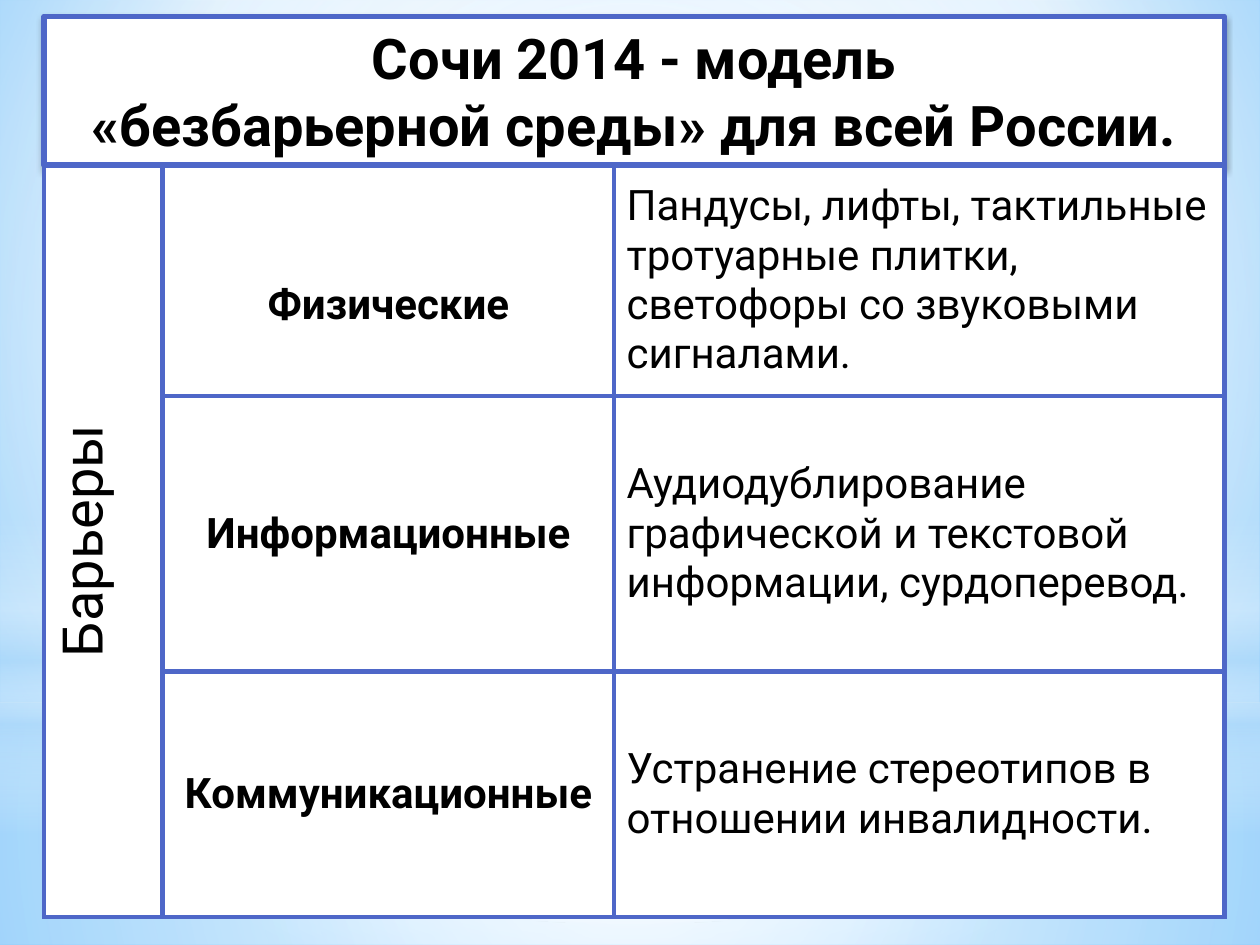
from pptx import Presentation
from pptx.dml.color import RGBColor
from pptx.enum.shapes import MSO_SHAPE as Shape
from pptx.enum.text import MSO_ANCHOR as Anchor, PP_ALIGN as Align
from pptx.oxml import parse_xml
from pptx.oxml.ns import nsdecls, qn
from pptx.util import Cm, Pt

COLORS = {
    "white": "FFFFFF", "black": "000000", "border": "4E67C8",
    "pale": "B4DCFA", "sky": "9ED5FF", "azure": "5BB9FF",
}
CENTER = (50, 50, 50, 50)
LEFT, TABLE_TOP = 0.89, 3.33
COLUMNS = (2.39, 9.1, 12.3)
ROWS = (4.65, 5.56, 4.93)
WIDTH = sum(COLUMNS)
BARRIERS = (
    ("Физические", "Пандусы, лифты, тактильные тротуарные плитки, "
                   "светофоры со звуковыми сигналами."),
    ("Информационные", "Аудиодублирование графической и текстовой "
                       "информации, сурдоперевод."),
    ("Коммуникационные", "Устранение стереотипов в отношении инвалидности."),
)


def rgb(name):
    return RGBColor.from_string(COLORS[name])


class Deck:
    font = "Roboto"
    border_width = Pt(3)

    def __init__(self, width, height):
        self.presentation = Presentation()
        self.presentation.slide_width = Cm(width)
        self.presentation.slide_height = Cm(height)
        self.slide = self.presentation.slides.add_slide(
            self.presentation.slide_layouts[6])

    def gradient(self, element, stops, focus=None):
        """Swap the solid fill in element for a gradient: round to focus, else downward.

        Stops are (position, colour, opacity), all numbers in percent.
        """
        stop_list = "".join(
            f'<a:gs pos="{position * 1000}"><a:srgbClr val="{COLORS[color]}">'
            f'<a:alpha val="{opacity * 1000}"/></a:srgbClr></a:gs>'
            for position, color, opacity in stops)
        if focus:
            sides = " ".join(f'{side}="{share * 1000}"' for side, share in zip("ltrb", focus))
            course = f'<a:path path="circle"><a:fillToRect {sides}/></a:path>'
        else:
            course = '<a:lin ang="5400000" scaled="0"/>'
        solid = element.find(".//" + qn("a:solidFill"))
        solid.getparent().replace(solid, parse_xml(
            f'<a:gradFill {nsdecls("a")} rotWithShape="1">'
            f'<a:gsLst>{stop_list}</a:gsLst>{course}</a:gradFill>'))

    def background(self, stops, focus):
        self.slide.background.fill.solid()
        self.slide.background.fill.fore_color.rgb = rgb("white")
        self.gradient(self.slide.element, stops, focus)

    def shape(self, kind, left, top, width, height):
        shape = self.slide.shapes.add_shape(kind, Cm(left), Cm(top), Cm(width), Cm(height))
        shape.shadow.inherit = False
        shape.fill.solid()
        shape.fill.fore_color.rgb = rgb("white")
        shape.line.fill.background()
        return shape

    def glow(self, kind, top, height, stops, focus=None):
        """Add a translucent band across the full slide width."""
        band = self.shape(kind, 0, top, 25.4, height)
        self.gradient(band.element.spPr, stops, focus)

    def set_text(self, frame, text, size, bold=False, align=Align.LEFT):
        frame.text = text
        frame.word_wrap = True
        for paragraph in frame.paragraphs:
            paragraph.alignment = align
            for run in paragraph.runs:
                run.font.name = self.font
                run.font.size = Pt(size)
                run.font.bold = bold
                run.font.color.rgb = rgb("black")

    def title(self, text, left, top, width, height):
        box = self.shape(Shape.RECTANGLE, left, top, width, height)
        box.line.color.rgb = rgb("border")
        box.line.width = self.border_width
        box.text_frame.vertical_anchor = Anchor.MIDDLE
        self.set_text(box.text_frame, text, 32, True, Align.CENTER)
        box.element.spPr.find(qn("a:effectLst")).append(parse_xml(
            f'<a:outerShdw {nsdecls("a")} blurRad="{Pt(3.5)}" dist="{Pt(2.2)}" dir="5400000">'
            f'<a:srgbClr val="{COLORS["black"]}"><a:alpha val="32000"/></a:srgbClr>'
            '</a:outerShdw>'))

    def table(self, left, top, columns, rows):
        frame = self.slide.shapes.add_table(
            len(rows), len(columns), Cm(left), Cm(top), Cm(sum(columns)), Cm(sum(rows)))
        table = frame.table
        table.first_row = table.horz_banding = False
        for column, width in zip(table.columns, columns):
            column.width = Cm(width)
        for row, height in zip(table.rows, rows):
            row.height = Cm(height)
        for cell in table.iter_cells():
            self.style_cell(cell)
        return table

    def style_cell(self, cell):
        cell.fill.solid()
        cell.fill.fore_color.rgb = rgb("white")
        cell.vertical_anchor = Anchor.MIDDLE
        properties = cell._tc.get_or_add_tcPr()
        for index, side in enumerate("LRTB"):
            properties.insert(index, parse_xml(
                f'<a:ln{side} {nsdecls("a")} w="{self.border_width}"><a:solidFill>'
                f'<a:srgbClr val="{COLORS["border"]}"/></a:solidFill></a:ln{side}>'))


def main():
    deck = Deck(25.4, 19.05)
    deck.background([(0, "sky", 100), (60, "white", 100), (100, "azure", 100)],
                    (20, 10, 20, 60))
    deck.glow(Shape.RECTANGLE, 14.17, 4.88,
              [(0, "white", 91), (37, "white", 76), (100, "pale", 79)], CENTER)
    deck.glow(Shape.RECTANGLE, 0, 14.17,
              [(0, "white", 89), (48, "white", 62), (100, "pale", 79)], CENTER)
    deck.glow(Shape.RECTANGLE, 10.46, 6.35,
              [(0, "white", 0), (29, "white", 30), (45, "pale", 40),
               (55, "white", 26), (65, "pale", 60), (100, "white", 0)])
    deck.glow(Shape.OVAL, 4.45, 14.17, [(0, "white", 100), (56, "white", 0)], CENTER)

    deck.title("Сочи 2014 - модель\n«безбарьерной среды» для всей России.",
               LEFT, 0.33, WIDTH, 3)

    table = deck.table(LEFT, TABLE_TOP, COLUMNS, ROWS)
    heading = table.cell(0, 0)
    heading.merge(table.cell(len(ROWS) - 1, 0))
    heading._tc.get_or_add_tcPr().set("vert", "vert270")
    deck.set_text(heading.text_frame, "Барьеры", 32, align=Align.CENTER)
    for row, (barrier, solution) in enumerate(BARRIERS):
        deck.set_text(table.cell(row, 1).text_frame, barrier, 24, True, Align.CENTER)
        deck.set_text(table.cell(row, 2).text_frame, solution, 24)
    table.cell(0, 1).margin_top = Cm(1.13)

    deck.presentation.save("out.pptx")


if __name__ == "__main__":
    main()
